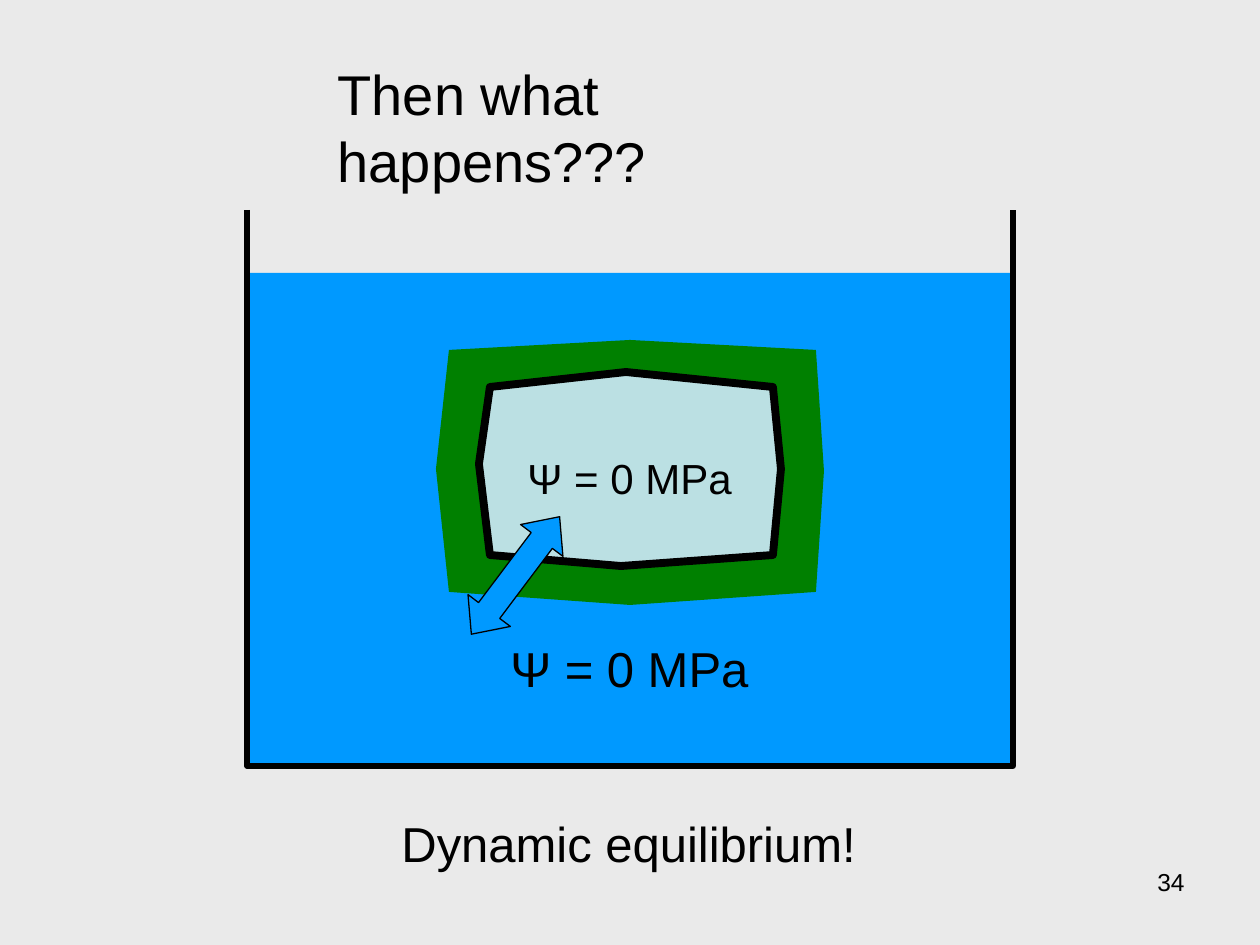
from lxml import etree
from pptx import Presentation
from pptx.dml.color import RGBColor
from pptx.enum.shapes import MSO_SHAPE
from pptx.enum.text import MSO_ANCHOR, MSO_AUTO_SIZE, PP_ALIGN
from pptx.oxml.ns import qn
from pptx.util import Pt

RECTANGLE = MSO_SHAPE.RECTANGLE
DOUBLE_ARROW = MSO_SHAPE.LEFT_RIGHT_ARROW
LEFT, RIGHT = PP_ALIGN.LEFT, PP_ALIGN.RIGHT
TOP = MSO_ANCHOR.TOP
NO_FIT, GROW = MSO_AUTO_SIZE.NONE, MSO_AUTO_SIZE.SHAPE_TO_FIT_TEXT

SCALE = 914400 / 126  # EMU per px
FONT = "Arial"
COLOURS = {
    "background": "EAEAEA",
    "ink": "000000",
    "water": "0099FF",
    "wall": "008000",
    "cell": "BBE0E3",
}

BEAKER = [(247, 210), (247, 766), (1013, 766), (1013, 210)]
CELL_WALL = [(449, 350), (630, 340), (816, 350), (824, 471),
             (816, 592), (630, 605), (449, 592), (436, 469)]
CELL_INSIDE = [(490, 387), (626, 372), (773, 387), (781, 469),
               (773, 555), (621, 566), (490, 555), (479, 464)]


def px(length):
    return round(length * SCALE)


def colour(name):
    return RGBColor.from_string(COLOURS[name])


def style(shape, fill=None, line_width=None):
    """Set fill and outline; None leaves the part empty."""
    shape.shadow.inherit = False
    if fill:
        shape.fill.solid()
        shape.fill.fore_color.rgb = colour(fill)
    else:
        shape.fill.background()
    if line_width:
        shape.line.width = Pt(line_width)
        shape.line.color.rgb = colour("ink")
        etree.SubElement(shape.line._get_or_add_ln(), qn("a:round"))
    else:
        shape.line.fill.background()


def add_preset(page, kind, place, fill, line_width=None):
    shape = page.shapes.add_shape(kind, *map(px, place))
    style(shape, fill, line_width)
    return shape


def add_outline(page, points, fill=None, line_width=None, closed=True):
    builder = page.shapes.build_freeform(*points[0], scale=SCALE)
    builder.add_line_segments(points[1:], close=closed)
    style(builder.convert_to_shape(), fill, line_width)


def write(box, text, size, align=LEFT):
    para = box.text_frame.paragraphs[0]
    para.alignment = align
    span = para.add_run()
    span.text = text
    span.font.name = FONT
    span.font.size = Pt(size)
    span.font.color.rgb = colour("ink")


def add_label(page, place, text, size):
    box = page.shapes.add_textbox(*map(px, place))
    box.text_frame.word_wrap = False
    box.text_frame.auto_size = GROW
    write(box, text, size)


def add_page_number(page, place, text):
    box = page.shapes.add_textbox(*map(px, place))
    box.text_frame.word_wrap = True
    write(box, text, 14, RIGHT)


def set_title(page, place, text):
    title = page.shapes.title
    title.left, title.top, title.width, title.height = map(px, place)
    title.fill.solid()
    title.fill.fore_color.rgb = colour("background")
    frame = title.text_frame
    frame.word_wrap = True
    frame.auto_size = NO_FIT
    frame.vertical_anchor = TOP
    write(title, text, 32)


def main():
    deck = Presentation()
    deck.slide_width, deck.slide_height = px(1260), px(945)
    page = deck.slides.add_slide(deck.slide_layouts[5])
    page.background.fill.solid()
    page.background.fill.fore_color.rgb = colour("background")

    add_page_number(page, (903, 861, 294, 66), "34")
    set_title(page, (325, 53, 606, 79), "Then what happens???")

    add_preset(page, RECTANGLE, (247, 273, 766, 493), "water")
    add_outline(page, BEAKER, line_width=3, closed=False)
    add_label(page, (498, 632, 267, 72), "Ψ = 0 MPa", 28)
    add_label(page, (389, 807, 485, 72), "Dynamic equilibrium!", 28)

    add_outline(page, CELL_WALL, "wall")
    add_outline(page, CELL_INSIDE, "cell", 4.5)
    add_label(page, (515, 446, 235, 63), "Ψ = 0 MPa", 24)

    arrow = add_preset(page, DOUBLE_ARROW, (442, 549, 147, 53), "water", 0.75)
    arrow.rotation = 306.9
    arrow.adjustments[0] = 0.5
    arrow.adjustments[1] = 0.56

    deck.save("out.pptx")


if __name__ == "__main__":
    main()
